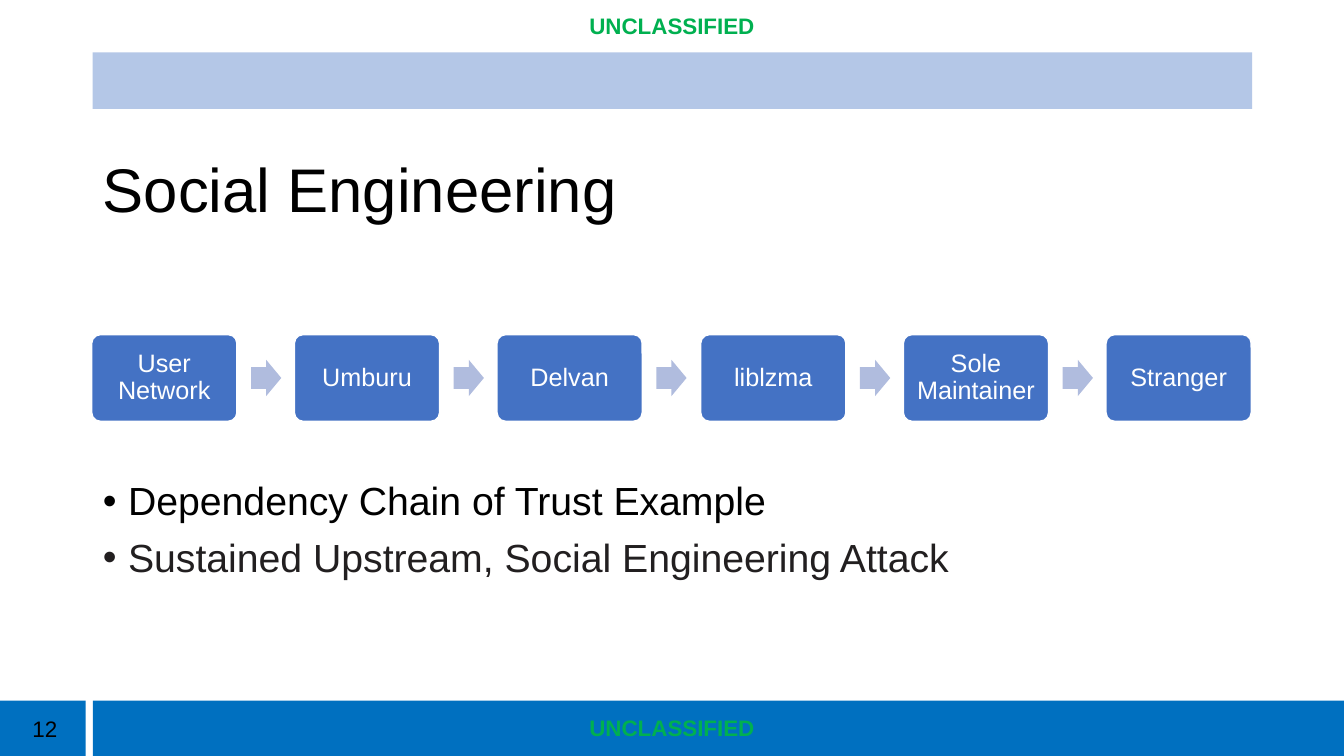
from pptx import Presentation
from pptx.dml.color import RGBColor
from pptx.enum.shapes import MSO_SHAPE
from pptx.enum.text import MSO_ANCHOR, MSO_AUTO_SIZE, PP_ALIGN
from pptx.oxml.ns import qn
from pptx.util import Pt
from lxml.etree import SubElement

PX = 9144  # EMU per px, 100 px to the inch
WIDE, HIGH = 1333, 750
FONT = "Arial"
BLACK = RGBColor(0x00, 0x00, 0x00)
WHITE = RGBColor(0xFF, 0xFF, 0xFF)
INK = RGBColor(0x22, 0x1F, 0x20)
GREEN = RGBColor(0x00, 0xB0, 0x50)
PALE = RGBColor(0xB4, 0xC7, 0xE7)
BLUE = RGBColor(0x00, 0x70, 0xC0)
STEP = RGBColor(0x44, 0x72, 0xC4)
ARROW = RGBColor(0xB0, 0xBC, 0xDE)

MARK = "UNCLASSIFIED"
CHAIN = ["User Network", "Umburu", "Delvan", "liblzma", "Sole Maintainer", "Stranger"]
POINTS = [("Dependency Chain of Trust Example", BLACK),
          ("Sustained Upstream, Social Engineering Attack", INK)]


def place(shape, left, top, width, height):
    shape.left, shape.top = left * PX, top * PX
    shape.width, shape.height = width * PX, height * PX


def write(para, text, size=16, color=BLACK, bold=False, align=PP_ALIGN.CENTER,
          line=1.0, before=0):
    """Fill one paragraph with one formatted run."""
    para.alignment, para.line_spacing = align, line
    para.space_before = Pt(before)
    run = para.add_run()
    run.text = text
    font = run.font
    font.name, font.size, font.bold = FONT, Pt(size), bold
    font.color.rgb = color


def frame(shape, anchor=MSO_ANCHOR.TOP):
    body = shape.text_frame
    body.word_wrap = True
    body.auto_size = MSO_AUTO_SIZE.NONE
    body.vertical_anchor = anchor
    return body


def block(slide, kind, box, fill, edge=None, adjust=()):
    shape = slide.shapes.add_shape(kind, *(n * PX for n in box))
    shape.shadow.inherit = False
    shape.fill.solid()
    shape.fill.fore_color.rgb = fill
    if edge is None:
        shape.line.fill.background()
    else:
        shape.line.color.rgb = edge
        shape.line.width = Pt(1)
    for i, value in enumerate(adjust):
        shape.adjustments[i] = value
    return shape


def label(slide, box, text, anchor=MSO_ANCHOR.TOP, **style):
    shape = slide.shapes.add_textbox(*(n * PX for n in box))
    write(frame(shape, anchor).paragraphs[0], text, **style)


def bullet(para):
    props = para._p.get_or_add_pPr()
    props.set("marL", str(25 * PX))
    props.set("indent", str(-25 * PX))
    SubElement(props, qn("a:buFont"), typeface=FONT)
    SubElement(props, qn("a:buChar"), char="•")


def chain(slide, names):
    """Draw rounded steps at an equal pitch, with an arrow in each gap."""
    first, last = 91, 1097
    for i, name in enumerate(names):
        left = round(first + i * (last - first) / (len(names) - 1))
        step = block(slide, MSO_SHAPE.ROUNDED_RECTANGLE, (left, 332, 144, 86),
                     STEP, WHITE, [0.1])
        body = frame(step, MSO_ANCHOR.MIDDLE)
        body.margin_left = body.margin_right = 9 * PX
        write(body.paragraphs[0], name, size=18, color=WHITE, line=0.9)
        if i < len(names) - 1:
            block(slide, MSO_SHAPE.RIGHT_ARROW, (left + 158, 357, 30, 36),
                  ARROW, adjust=[0.6, 0.5])


def main():
    deck = Presentation()
    deck.slide_width, deck.slide_height = WIDE * PX, HIGH * PX
    slide = deck.slides.add_slide(deck.slide_layouts[1])

    # Bands at the top and foot
    for box, fill in [((92, 52, 1150, 56), PALE),
                      ((92, 695, 1241, 55), BLUE),
                      ((0, 695, 85, 55), BLUE)]:
        block(slide, MSO_SHAPE.RECTANGLE, box, fill)

    # Markings and page number
    label(slide, (0, 0, WIDE, 51), MARK, MSO_ANCHOR.MIDDLE, color=GREEN, bold=True)
    label(slide, (0, 704, WIDE, 46), MARK, color=GREEN, bold=True)
    label(slide, (2, 705, 85, 45), "12")

    chain(slide, CHAIN)

    # Title
    title = slide.shapes.title
    place(title, 92, 119, 1150, 145)
    write(frame(title, MSO_ANCHOR.MIDDLE).paragraphs[0], "Social Engineering",
          size=44, align=PP_ALIGN.LEFT, line=0.9)

    # Bullet list
    points = slide.placeholders[1]
    place(points, 92, 473, 1150, 153)
    body = frame(points)
    for i, (text, color) in enumerate(POINTS):
        para = body.add_paragraph() if i else body.paragraphs[0]
        write(para, text, size=28, color=color, align=PP_ALIGN.LEFT,
              line=0.9, before=10)
        bullet(para)

    deck.save("out.pptx")


if __name__ == "__main__":
    main()
